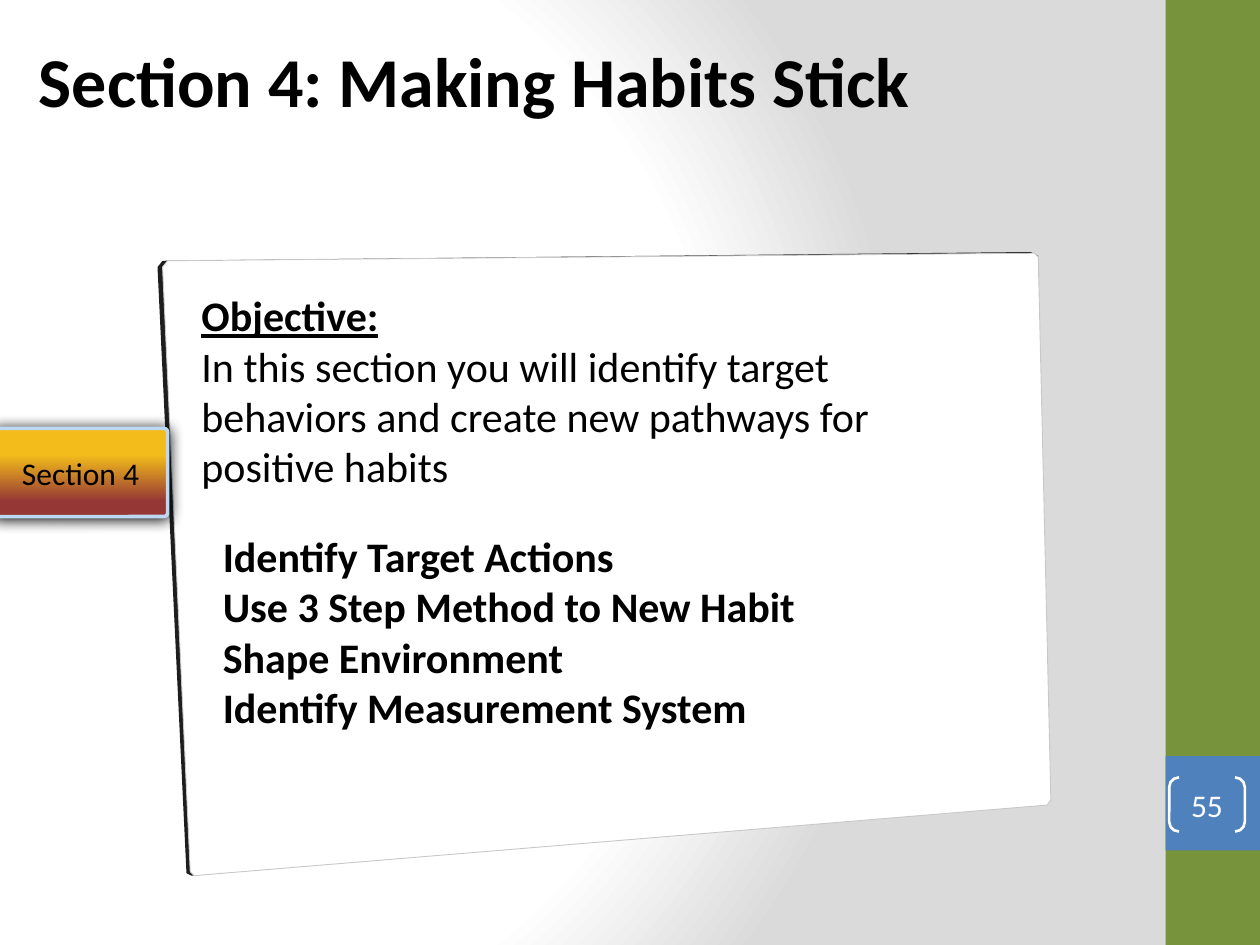
import pptx
import pptx.util
import pptx.dml.color
import pptx.enum.shapes
import pptx.enum.text
import pptx.oxml
import pptx.oxml.ns

Inches, Pt = pptx.util.Inches, pptx.util.Pt
Shape = pptx.enum.shapes.MSO_SHAPE
NS = pptx.oxml.ns.nsdecls("a")
COLORS = {"ink": "000000", "white": "FFFFFF", "gray": "DADADA", "green": "77933C",
          "blue": "4F81BD", "edge": "BDD8F3", "red": "953735", "gold": "F3BC1B",
          "side": "1E1E1E", "rim": "C8C8C8"}

# Content: each paragraph is (text, bold, underlined)
TITLE = [("Section 4: Making Habits Stick", True, False)]
GOAL = [("Objective:", True, True),
        ("In this section you will identify target behaviors and create "
         "new pathways for positive habits", False, False)]
STEPS = [(step, True, False) for step in (
    "Identify Target Actions", "Use 3 Step Method to New Habit",
    "Shape Environment", "Identify Measurement System")]
TEXTS = [(TITLE, 40, (0.21, 0.25, 8.29, 0.77)),
         (STEPS, 24, (1.67, 4.16, 6.67, 1.72)),
         (GOAL, 24, (1.5, 2.25, 5.92, 1.72))]
BANDS = [("green", (9.25, 0, 0.75, 7.5)), ("blue", (9.25, 6, 0.75, 0.75))]

# Tilted card: dark side first, white face over it
CARD = [("side", None, [(1.25, 2.12), (1.29, 2.07), (8.18, 2), (8.24, 2.03),
                        (8.3, 6.38), (1.52, 6.95), (1.48, 6.93)]),
        ("white", "rim", [(1.29, 2.12), (1.33, 2.07), (8.21, 2.01), (8.24, 2.04),
                          (8.34, 6.35), (8.31, 6.39), (1.54, 6.95), (1.51, 6.92)])]


def rgb(name):
    return pptx.dml.color.RGBColor.from_string(COLORS[name])


def paint(shape, fill=None, line=None, width=1):
    shape.shadow.inherit = False
    if fill:
        shape.fill.solid()
        shape.fill.fore_color.rgb = rgb(fill)
    else:
        shape.fill.background()
    if line:
        shape.line.color.rgb = rgb(line)
        shape.line.width = Pt(width)
    else:
        shape.line.fill.background()


def add(kind, box):
    return slide.shapes.add_shape(kind, *map(Inches, box))


def write(frame, rows, size, color="ink", align=pptx.enum.text.PP_ALIGN.LEFT):
    frame.word_wrap = True
    frame.text = "\n".join(row[0] for row in rows)
    for para, (_, bold, under) in zip(frame.paragraphs, rows):
        para.alignment = align
        for run in para.runs:
            font = run.font
            font.name, font.size = "Calibri", Pt(size)
            font.bold, font.underline = bold, under
            font.color.rgb = rgb(color)


deck = pptx.Presentation()
deck.slide_width, deck.slide_height = Inches(10), Inches(7.5)
slide = deck.slides.add_slide(deck.slide_layouts[6])
center = pptx.enum.text.PP_ALIGN.CENTER

# Background: radial gradient
slide.background.fill.gradient()
stops = "".join(f'<a:gs pos="{pos}000"><a:srgbClr val="{COLORS[name]}"/></a:gs>'
                for pos, name in ((0, "white"), (75, "white"), (100, "gray")))
old = slide.element.find(".//" + pptx.oxml.ns.qn("a:gradFill"))
old.getparent().replace(old, pptx.oxml.parse_xml(
    f'<a:gradFill {NS} rotWithShape="1"><a:gsLst>{stops}</a:gsLst>'
    '<a:path path="circle"><a:fillToRect l="20000" t="50000" r="100000" b="50000"/>'
    '</a:path></a:gradFill>'))

# Right-hand bands
for name, box in BANDS:
    paint(add(Shape.RECTANGLE, box), name)

# Card
for fill, line, points in CARD:
    spots = [(Inches(x), Inches(y)) for x, y in points]
    pen = slide.shapes.build_freeform(*spots[0])
    pen.add_line_segments(spots[1:], close=True)
    paint(pen.convert_to_shape(), fill, line, 0.5)

# Title and card text
for rows, size, box in TEXTS:
    write(slide.shapes.add_textbox(*map(Inches, box)).text_frame, rows, size)

# Page number
page = add(Shape.DOUBLE_BRACKET, (9.28, 6.17, 0.6, 0.43))
page.adjustments[0] = 0.18
paint(page, None, "white", 1.5)
frame = page.text_frame
frame.margin_left = frame.margin_right = frame.margin_top = frame.margin_bottom = 0
frame.vertical_anchor = pptx.enum.text.MSO_ANCHOR.MIDDLE
write(frame, [("55", False, False)], 18, "white", center)

# Section tag
tag = add(Shape.ROUNDED_RECTANGLE, (-0.05, 3.4, 1.38, 0.7))
tag.adjustments[0] = 0.04
paint(tag, None, "edge", 2)
tag.fill.gradient()
tag.fill.gradient_angle = 90
for stop, (pos, name) in zip(tag.fill.gradient_stops, ((0.17, "red"), (0.7, "gold"))):
    stop.position = pos
    stop.color.rgb = rgb(name)
tag.element.spPr.find(pptx.oxml.ns.qn("a:effectLst")).append(pptx.oxml.parse_xml(
    f'<a:outerShdw {NS} blurRad="{Pt(8.5)}" dist="{Pt(1)}" dir="5400000" '
    f'rotWithShape="0"><a:srgbClr val="{COLORS["ink"]}"/></a:outerShdw>'))
tag.text_frame.vertical_anchor = pptx.enum.text.MSO_ANCHOR.MIDDLE
write(tag.text_frame, [("Section 4", False, False)], 18, "ink", center)

deck.save("out.pptx")
